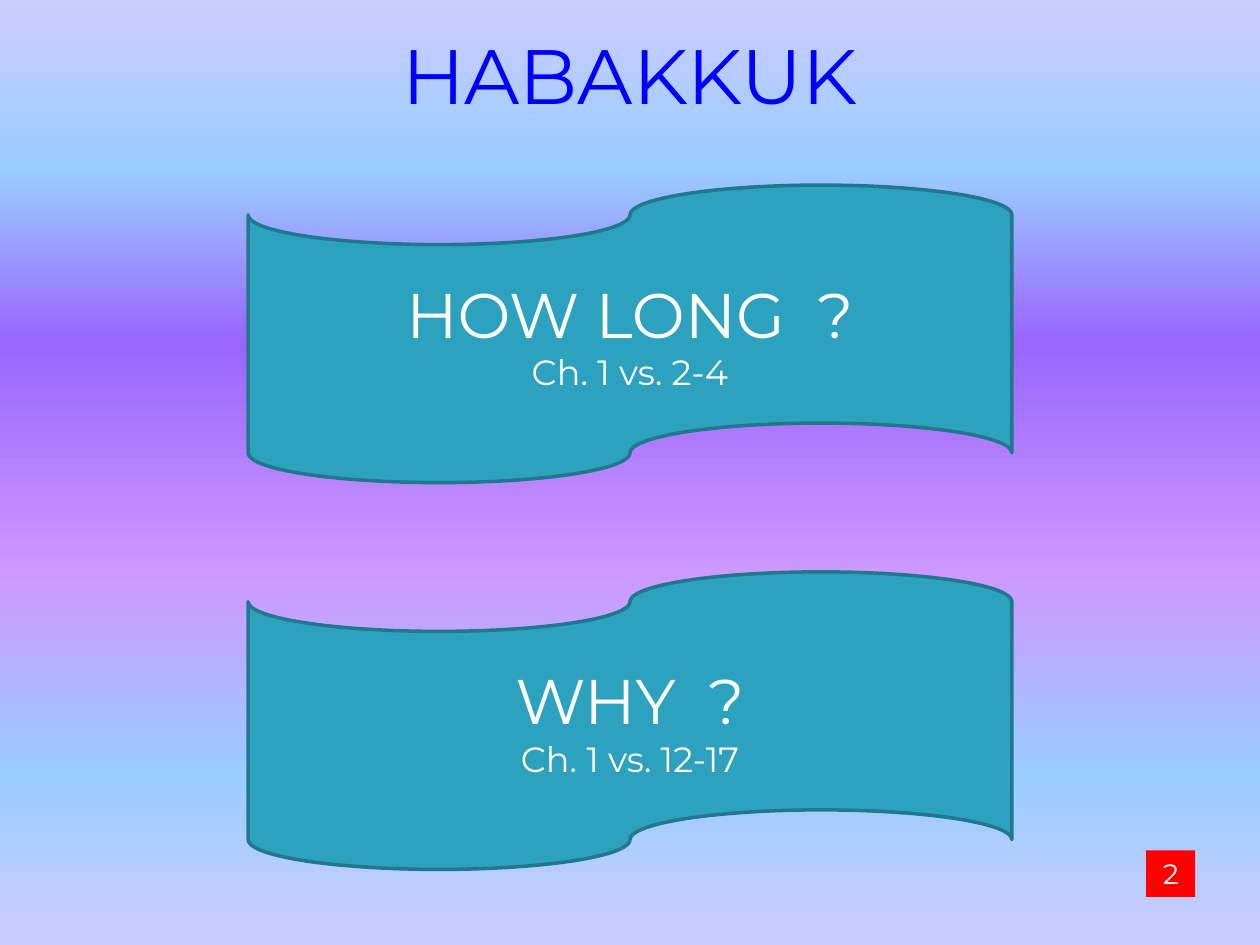
from dataclasses import dataclass

from lxml.etree import SubElement
from pptx import Presentation
from pptx.dml.color import RGBColor
from pptx.enum.shapes import MSO_SHAPE as Shape
from pptx.enum.text import MSO_ANCHOR as Anchor, PP_ALIGN as Align
from pptx.oxml.ns import qn
from pptx.slide import Slide
from pptx.text.text import TextFrame
from pptx.util import Pt

FONT = "Montserrat"
COLORS = {
    "lavender": "CCCCFF",
    "sky": "99CCFF",
    "violet": "9966FF",
    "orchid": "CC99FF",
    "title": "0000FF",
    "tape": "2DA2BF",
    "outline": "21788D",
    "badge": "FF0000",
    "white": "FFFFFF",
}
BACKGROUND = [
    (0, "lavender"),
    (18, "sky"),
    (36, "violet"),
    (61, "orchid"),
    (82, "sky"),
    (100, "lavender"),
]


@dataclass
class Question:
    text: str
    verses: str


QUESTIONS = [
    Question("HOW LONG  ?", "Ch. 1 vs. 2-4"),
    Question("WHY  ?", "Ch. 1 vs. 12-17"),
]
TAPE_LEFT, TAPE_TOP, TAPE_WIDTH, TAPE_HEIGHT = 141.8, 105.8, 436.4, 170
TAPE_STEP = 221


def rgb(name: str) -> RGBColor:
    return RGBColor.from_string(COLORS[name])


def write(tf: TextFrame, text: str, *, size: float, color: str = "white",
          first: bool = True) -> None:
    p = tf.paragraphs[0] if first else tf.add_paragraph()
    p.alignment = Align.CENTER
    r = p.add_run()
    r.text = text
    r.font.name = FONT
    r.font.size = Pt(size)
    r.font.color.rgb = rgb(color)


def paint_background(s: Slide) -> None:
    fill = s.background.fill
    fill.gradient()
    fill.gradient_angle = 270
    stops = s.element.find(".//" + qn("a:gsLst"))
    for stop in list(stops):
        stops.remove(stop)
    for percent, color in BACKGROUND:
        stop = SubElement(stops, qn("a:gs"), pos=str(percent * 1000))
        SubElement(stop, qn("a:srgbClr"), val=COLORS[color])


def add_filled(s: Slide, kind: Shape, left: float, top: float, width: float,
               height: float, fill: str, line: str | None = None) -> TextFrame:
    sp = s.shapes.add_shape(kind, Pt(left), Pt(top), Pt(width), Pt(height))
    sp.shadow.inherit = False
    sp.fill.solid()
    sp.fill.fore_color.rgb = rgb(fill)
    if line:
        sp.line.color.rgb = rgb(line)
        sp.line.width = Pt(2)
    else:
        sp.line.fill.background()
    tf = sp.text_frame
    tf.vertical_anchor = Anchor.MIDDLE
    return tf


def add_title(s: Slide, text: str) -> None:
    sp = s.shapes.add_textbox(Pt(0), Pt(12), Pt(720), Pt(60.5))
    tf = sp.text_frame
    tf.word_wrap = True
    write(tf, text, size=44, color="title")


def add_question(s: Slide, question: Question, top: float) -> None:
    tf = add_filled(s, Shape.FLOWCHART_PUNCHED_TAPE, TAPE_LEFT, top,
                    TAPE_WIDTH, TAPE_HEIGHT, "tape", "outline")
    write(tf, question.text, size=36)
    write(tf, question.verses, size=20, first=False)


def add_badge(s: Slide, text: str) -> None:
    tf = add_filled(s, Shape.RECTANGLE, 655, 486, 28, 26.6, "badge")
    tf.word_wrap = False
    write(tf, text, size=16)


def main() -> None:
    prs = Presentation()
    prs.slide_width, prs.slide_height = Pt(720), Pt(540)
    s = prs.slides.add_slide(prs.slide_layouts[6])
    paint_background(s)
    add_title(s, "HABAKKUK")
    for i, question in enumerate(QUESTIONS):
        add_question(s, question, TAPE_TOP + i * TAPE_STEP)
    add_badge(s, "2")
    prs.save("out.pptx")


if __name__ == "__main__":
    main()
